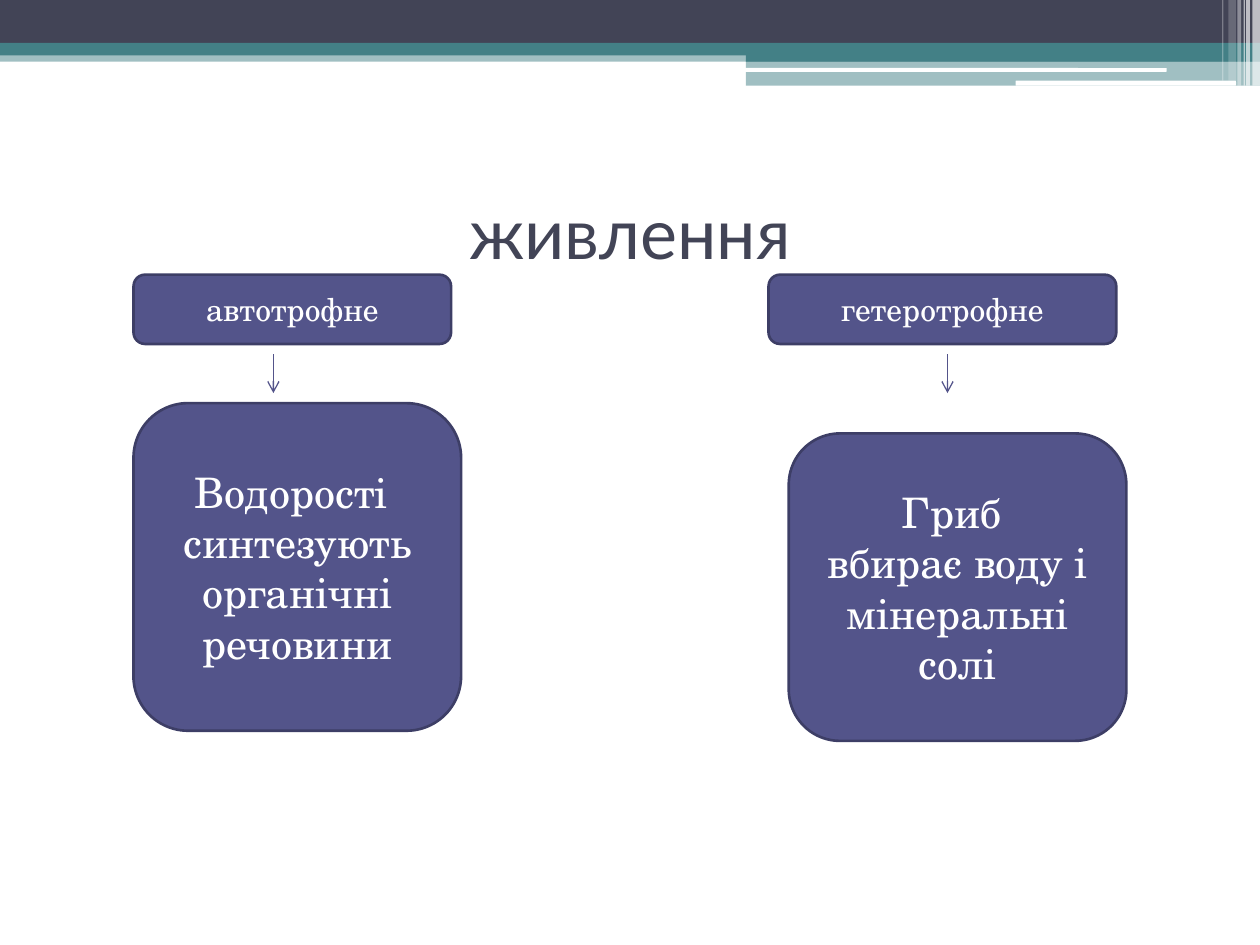
from lxml.etree import SubElement
from pptx import Presentation
from pptx.dml.color import RGBColor
from pptx.enum.shapes import MSO_CONNECTOR, MSO_SHAPE
from pptx.enum.text import MSO_ANCHOR, PP_ALIGN
from pptx.oxml.ns import qn
from pptx.util import Inches, Pt

THEME = {
    "dark": "424456", "teal": "438086", "white": "FFFFFF",
    "box": "53548A", "edge": "3D3E66",
    "head": ("Lato", 40), "label": ("TeX Gyre Schola", 18),
    "body": ("TeX Gyre Schola", 24),
}
TITLE = "живлення"
BANDS = [
    ((0, 0.4, 10, 0.09), "teal", 50),
    ((0, 0, 10, 0.34), "dark", 100),
    ((0, 0.34, 10, 0.1), "teal", 100),
    ((5.92, 0.39, 4.08, 0.1), "teal", 100),
    ((5.92, 0.48, 4.08, 0.2), "teal", 50),
]
BARS = [(5.91, 0.54, 3.35, 0.03), (8.06, 0.64, 1.75, 0.04)]
STRIPES = [
    (9.94, 0.06, 0.68, 65), (9.89, 0.03, 0.68, 65), (9.87, 0.01, 0.68, 60),
    (9.82, 0.03, 0.68, 40), (9.75, 0.06, 0.64, 20), (9.7, 0.01, 0.64, 30),
]
TYPES = [
    {"label": "автотрофне", "top": (1.06, 2.18, 2.52, 0.55), "arrow": 2.17,
     "body": ["Водорості ", "синтезують органічні речовини"],
     "low": (1.06, 3.2, 2.6, 2.6)},
    {"label": "гетеротрофне", "top": (6.1, 2.18, 2.76, 0.55), "arrow": 7.52,
     "body": ["Гриб ", "вбирає воду і мінеральні солі"],
     "low": (6.26, 3.44, 2.68, 2.44)},
]
ARROW_Y = (2.81, 3.12)


def color(name):
    return RGBColor.from_string(THEME[name])


def write(shape, lines, style, ink):
    frame = shape.text_frame
    frame.word_wrap = True
    frame.vertical_anchor = MSO_ANCHOR.MIDDLE
    frame.text = "\n".join(lines)
    face, size = THEME[style]
    for para in frame.paragraphs:
        para.alignment = PP_ALIGN.CENTER
        para.font.name = face
        para.font.size = Pt(size)
        para.font.color.rgb = color(ink)


def block(slide, at, fill, alpha=100, kind=MSO_SHAPE.RECTANGLE):
    shape = slide.shapes.add_shape(kind, *map(Inches, at))
    shape.shadow.inherit = False
    shape.fill.solid()
    shape.fill.fore_color.rgb = color(fill)
    shape.line.fill.background()
    if alpha < 100:
        tint = shape.fill._xPr.find(qn("a:solidFill"))[0]
        SubElement(tint, qn("a:alpha"), val=str(alpha * 1000))
    return shape


def card(slide, at, lines, style):
    shape = block(slide, at, "box", kind=MSO_SHAPE.ROUNDED_RECTANGLE)
    shape.line.color.rgb = color("edge")
    shape.line.width = Pt(1.5)
    write(shape, lines, style, "white")


def arrow(slide, x):
    start, end = ARROW_Y
    line = slide.shapes.add_connector(
        MSO_CONNECTOR.STRAIGHT, Inches(x), Inches(start), Inches(x), Inches(end))
    line.line.color.rgb = color("box")
    line.line.width = Pt(0.75)
    SubElement(line.line._get_or_add_ln(), qn("a:tailEnd"), type="arrow")
    SubElement(line._element.spPr, qn("a:effectLst"))


def main():
    deck = Presentation()
    deck.slide_width, deck.slide_height = Inches(10), Inches(7.5)
    slide = deck.slides.add_slide(deck.slide_layouts[5])

    for at, fill, alpha in BANDS:
        block(slide, at, fill, alpha)
    for at in BARS:
        block(slide, at, "white", kind=MSO_SHAPE.ROUNDED_RECTANGLE)
    for x, wide, high, alpha in STRIPES:
        block(slide, (x, 0, wide, high), "white", alpha)

    title = slide.shapes.title
    title.left, title.top = Inches(0.5), Inches(1.25)
    title.width, title.height = Inches(9), Inches(1.17)
    write(title, [TITLE], "head", "dark")

    for item in TYPES:
        card(slide, item["top"], [item["label"]], "label")
        arrow(slide, item["arrow"])
        card(slide, item["low"], item["body"], "body")

    deck.save("out.pptx")


if __name__ == "__main__":
    main()
